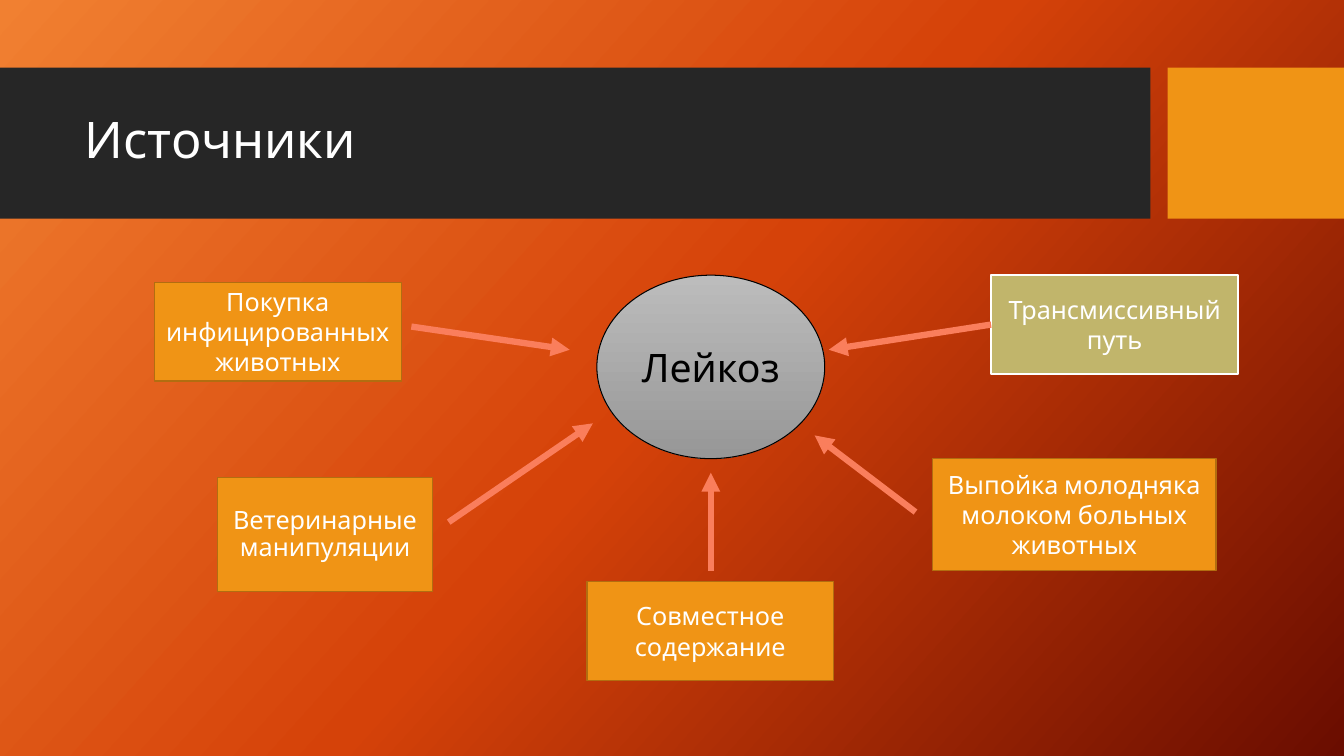
import pptx
import pptx.util
import pptx.dml.color
import pptx.enum.shapes
import pptx.enum.text
import pptx.oxml
import pptx.oxml.ns
import lxml.etree

Inches = pptx.util.Inches
Pt = pptx.util.Pt
SHAPE = pptx.enum.shapes.MSO_SHAPE
ALIGN = pptx.enum.text.PP_ALIGN
FONT = "Cabin"
COLORS = {
    "band": "262626", "orange": "F09415", "border": "B26D10",
    "olive": "C1B56B", "white": "FFFFFF", "black": "000000", "arrow": "FA7E5C",
}
BACKGROUND_STOPS = [(0, "F18031"), (50, "D54209"), (100, "6A0D00")]
ELLIPSE_STOPS = [(0, "BCBCBC"), (100, "979797")]
SOURCES = [
    ("Покупка инфицированных животных", (1.53, 2.8, 2.45, 0.98), {}),
    ("Ветеринарные манипуляции", (2.16, 4.74, 2.13, 1.13), {"spacing": 0.9}),
    ("Совместное содержание", (5.82, 5.77, 2.45, 0.98), {}),
    ("Трансмиссивный путь", (9.83, 2.73, 2.45, 0.98),
     {"fill": "olive", "line": "white", "width": 1.5}),
    ("Выпойка молодняка молоком больных животных", (9.25, 4.55, 2.81, 1.11), {}),
]
ARROWS = [
    (4.08, 3.24, 5.65, 3.47),
    (4.45, 5.18, 5.88, 4.2),
    (7.05, 5.66, 7.05, 4.69),
    (9.83, 3.22, 8.22, 3.47),
    (9.08, 5.08, 8.08, 4.32),
]
JOINED = 3


def rgb(name):
    """Return the named colour."""
    return pptx.dml.color.RGBColor.from_string(COLORS[name])


def set_gradient(fill, element, stops, angle):
    """Fill with gradient stops at a clockwise angle."""
    fill.gradient()
    fill.gradient_angle = 360 - angle
    stop_list = next(element.iter(pptx.oxml.ns.qn("a:gsLst")))
    for stop in list(stop_list):
        stop_list.remove(stop)
    for position, color in stops:
        stop = lxml.etree.SubElement(
            stop_list, pptx.oxml.ns.qn("a:gs"), pos=str(position * 1000))
        lxml.etree.SubElement(stop, pptx.oxml.ns.qn("a:srgbClr"), val=color)


def write_text(shape, text, size, color, align=ALIGN.CENTER, spacing=None):
    """Write one formatted, vertically centred paragraph."""
    frame = shape.text_frame
    frame.word_wrap = True
    frame.auto_size = pptx.enum.text.MSO_AUTO_SIZE.NONE
    frame.vertical_anchor = pptx.enum.text.MSO_ANCHOR.MIDDLE
    paragraph = frame.paragraphs[0]
    paragraph.text = text
    paragraph.alignment = align
    paragraph.line_spacing = spacing
    for name, value in {"name": FONT, "size": Pt(size)}.items():
        setattr(paragraph.font, name, value)
    paragraph.font.color.rgb = rgb(color)


def add_box(slide, box, fill="orange", line=None, width=1, kind=SHAPE.RECTANGLE):
    """Add a flat shape with an optional outline."""
    shape = slide.shapes.add_shape(kind, *map(Inches, box))
    shape.shadow.inherit = False
    shape.fill.solid()
    shape.fill.fore_color.rgb = rgb(fill)
    if line:
        shape.line.color.rgb = rgb(line)
        shape.line.width = Pt(width)
    else:
        shape.line.fill.background()
    return shape


def add_source(slide, text, box, fill="orange", line="border", width=1, spacing=None):
    """Add a labelled source of infection."""
    shape = add_box(slide, box, fill, line, width)
    write_text(shape, text, 18, "white", spacing=spacing)
    return shape


def add_arrow(slide, ends):
    """Add a thick arrow between two points."""
    arrow = slide.shapes.add_connector(
        pptx.enum.shapes.MSO_CONNECTOR.STRAIGHT, *map(Inches, ends))
    arrow.line.color.rgb = rgb("arrow")
    arrow.line.width = Pt(4.5)
    line = arrow.line.fill and arrow.element.spPr.find(pptx.oxml.ns.qn("a:ln"))
    lxml.etree.SubElement(line, pptx.oxml.ns.qn("a:tailEnd"), type="triangle")
    lxml.etree.SubElement(arrow.element.spPr, pptx.oxml.ns.qn("a:effectLst"))
    return arrow


def add_title(slide, text):
    """Place the title over its dark band and orange block."""
    title = slide.shapes.title
    for box, fill in [((0, 0.67, 11.41, 1.5), "band"),
                      ((11.58, 0.67, 1.75, 1.5), "orange")]:
        title.element.addprevious(add_box(slide, box, fill).element)
    place = {"left": 0.74, "top": 0.82, "width": 10.51, "height": 1.18}
    for name, value in place.items():
        setattr(title, name, Inches(value))
    write_text(title, text, 36, "white", ALIGN.LEFT, 0.9)


def main():
    """Build and save the slide."""
    presentation = pptx.Presentation()
    presentation.slide_width = Inches(13.33)
    presentation.slide_height = Inches(7.5)
    slide = presentation.slides.add_slide(presentation.slide_layouts[5])
    set_gradient(slide.background.fill, slide.element, BACKGROUND_STOPS, 42)
    add_title(slide, "Источники")

    disease = add_box(slide, (5.92, 2.73, 2.26, 1.82), line="black", width=0.75,
                      kind=SHAPE.OVAL)
    set_gradient(disease.fill, disease.element, ELLIPSE_STOPS, 90)
    write_text(disease, "Лейкоз", 28, "black")

    sources = [add_source(slide, text, box, **style) for text, box, style in SOURCES]
    arrows = [add_arrow(slide, ends) for ends in ARROWS]
    arrows[JOINED].begin_connect(sources[JOINED], 1)
    presentation.save("out.pptx")


if __name__ == "__main__":
    main()
